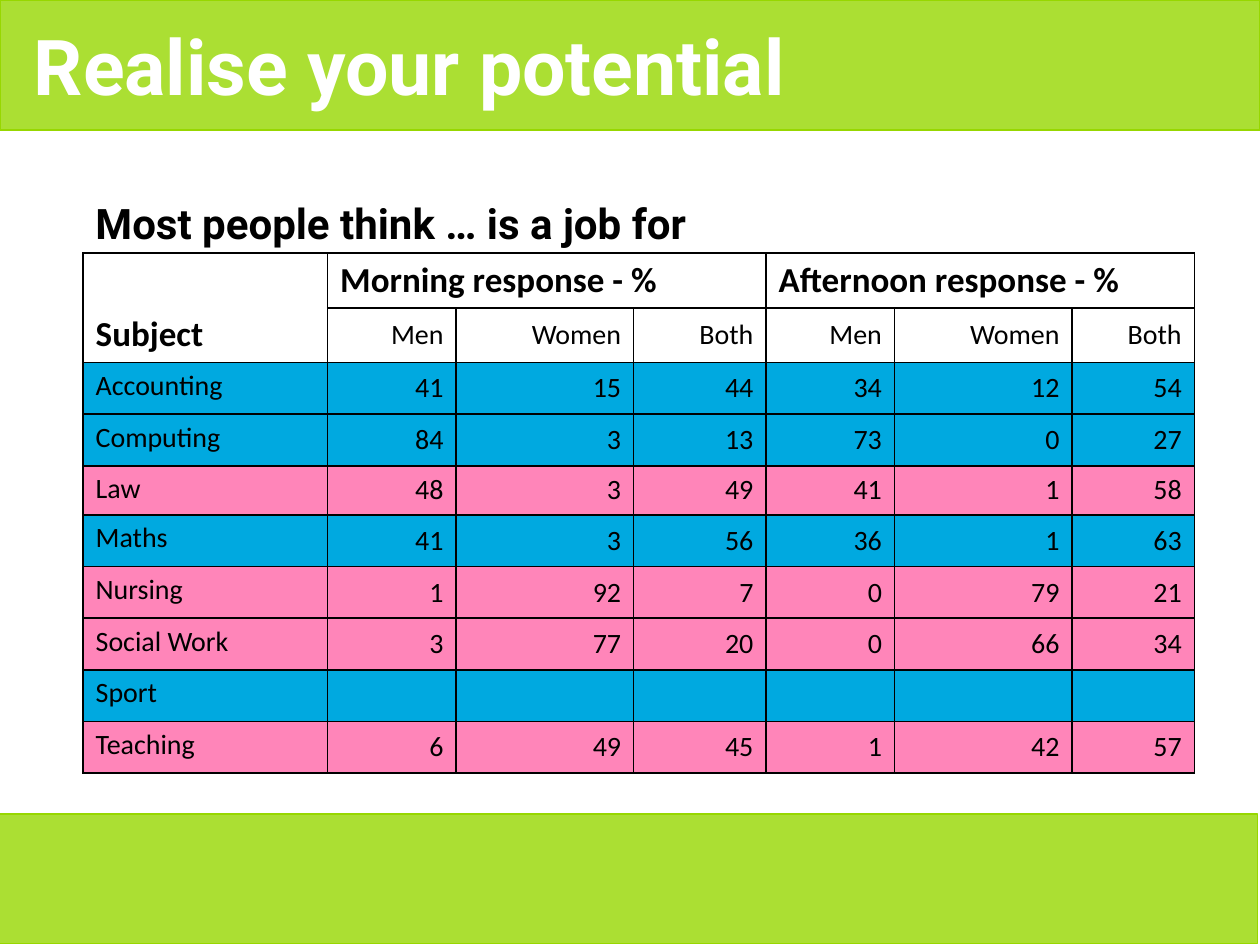
from dataclasses import dataclass

from lxml import etree
from pptx import Presentation
from pptx import util as u
from pptx.dml.color import RGBColor
from pptx.enum import shapes, text
from pptx.oxml.ns import qn

TITLE = "Realise your potential"
HEADING = "Most people think … is a job for"
GROUPS = ["Morning response - %", "Afternoon response - %"]
ANSWERS = ["Men", "Women", "Both"]
# subject, row colour, morning and afternoon percentages
SUBJECTS = [
    ("Accounting", "blue", [41, 15, 44, 34, 12, 54]),
    ("Computing", "blue", [84, 3, 13, 73, 0, 27]),
    ("Law", "pink", [48, 3, 49, 41, 1, 58]),
    ("Maths", "blue", [41, 3, 56, 36, 1, 63]),
    ("Nursing", "pink", [1, 92, 7, 0, 79, 21]),
    ("Social Work", "pink", [3, 77, 20, 0, 66, 34]),
    ("Sport", "blue", [""] * 6),
    ("Teaching", "pink", [6, 49, 45, 1, 42, 57]),
]
COL_WIDTHS = [1.94, 1.02, 1.41, 1.05, 1.02, 1.41, 0.97]
ROW_HEIGHT, LAW_HEIGHT = 0.41, 0.39
LEFT, WIDTH = 0.66, 8.84


@dataclass(frozen=True)
class Theme:
    green: str = "97D700"
    blue: str = "00A9E0"
    pink: str = "FF85B9"
    black: str = "000000"
    white: str = "FFFFFF"
    head_font: str = "Roboto"
    body_font: str = "Calibri"
    title: int = 44
    heading: int = 24
    group: int = 20
    body: int = 16


T = Theme()
ANCHOR, ALIGN = text.MSO_ANCHOR, text.PP_ALIGN


def write(tf, words, size, font, color=T.black, bold=False, align=ALIGN.LEFT):
    tf.text = str(words)
    p = tf.paragraphs[0]
    p.alignment = align
    for r in p.runs:
        f = r.font
        f.size, f.name, f.bold = u.Pt(size), font, bold
        f.color.rgb = RGBColor.from_string(color)
    return p


def add_bar(s, left, top):
    """Add a full-width green band at 80 % opacity."""
    sp = s.shapes.add_shape(shapes.MSO_SHAPE.RECTANGLE, u.Inches(left),
                            u.Inches(top), u.Inches(10), u.Inches(1.03))
    sp.shadow.inherit = False
    sp.fill.solid()
    sp.fill.fore_color.rgb = sp.line.color.rgb = RGBColor.from_string(T.green)
    sp.line.width = u.Pt(1)
    clr = sp._element.spPr.find(qn("a:solidFill")).find(qn("a:srgbClr"))
    etree.SubElement(clr, qn("a:alpha"), val="80000")
    return sp


def style_cell(cell, fill=None):
    """Draw the four borders, then the fill, which must follow them in the XML."""
    tcPr = cell._tc.get_or_add_tcPr()
    for side in ("lnL", "lnR", "lnT", "lnB"):
        ln = etree.SubElement(tcPr, qn(f"a:{side}"), w=str(u.Pt(1)))
        solid = etree.SubElement(ln, qn("a:solidFill"))
        etree.SubElement(solid, qn("a:srgbClr"), val=T.black)
    if fill:
        cell.fill.solid()
        cell.fill.fore_color.rgb = RGBColor.from_string(fill)
    else:
        cell.fill.background()


def write_cell(cell, words, anchor=ANCHOR.TOP, size=T.body, **style):
    cell.vertical_anchor = anchor
    write(cell.text_frame, words, size, T.body_font, **style)


def add_titles(s):
    tf = add_bar(s, 0, 0).text_frame
    tf.word_wrap = True
    tf.vertical_anchor = ANCHOR.MIDDLE
    tf.margin_left = tf.margin_right = u.Inches(0.07)
    tf.margin_top = tf.margin_bottom = u.Inches(0.04)
    p = write(tf, TITLE, T.title, T.head_font, T.white, bold=True)
    p._p.get_or_add_pPr().set("marL", str(u.Inches(0.2)))
    add_bar(s, -0.02, 6.46)

    tf = s.shapes.add_textbox(u.Inches(LEFT), u.Inches(1.39),
                              u.Inches(WIDTH), u.Inches(0.63)).text_frame
    tf.word_wrap = True
    tf.vertical_anchor = ANCHOR.BOTTOM
    p = write(tf, HEADING, T.heading, T.head_font, bold=True)
    p.line_spacing = 0.9


def add_survey_table(s):
    heights = [ROW_HEIGHT] * 2 + [
        LAW_HEIGHT if name == "Law" else ROW_HEIGHT for name, _, _ in SUBJECTS]
    tbl = s.shapes.add_table(len(heights), len(COL_WIDTHS), u.Inches(LEFT),
                             u.Inches(2.01), u.Inches(WIDTH),
                             u.Inches(sum(heights))).table
    tbl.first_row = tbl.horz_banding = False
    for col, width in zip(tbl.columns, COL_WIDTHS):
        col.width = u.Inches(width)
    for row, height in zip(tbl.rows, heights):
        row.height = u.Inches(height)

    fills = [None, None] + [getattr(T, color) for _, color, _ in SUBJECTS]
    for row, fill in zip(tbl.rows, fills):
        for cell in row.cells:
            style_cell(cell, fill)

    tbl.cell(0, 0).merge(tbl.cell(1, 0))
    write_cell(tbl.cell(0, 0), "Subject", ANCHOR.BOTTOM, T.group, bold=True)
    span = len(ANSWERS)
    for i, group in enumerate(GROUPS):
        first = 1 + i * span
        tbl.cell(0, first).merge(tbl.cell(0, first + span - 1))
        write_cell(tbl.cell(0, first), group, size=T.group, bold=True)

    value_rows = [ANSWERS * len(GROUPS)] + [values for _, _, values in SUBJECTS]
    for i, values in enumerate(value_rows, 1):
        for j, value in enumerate(values, 1):
            write_cell(tbl.cell(i, j), value, ANCHOR.MIDDLE, align=ALIGN.RIGHT)
    for i, (name, _, _) in enumerate(SUBJECTS, 2):
        write_cell(tbl.cell(i, 0), name)


def main():
    prs = Presentation()
    prs.slide_width, prs.slide_height = u.Inches(10), u.Inches(7.5)
    s = prs.slides.add_slide(prs.slide_layouts[6])
    add_titles(s)
    add_survey_table(s)
    prs.save("out.pptx")


if __name__ == "__main__":
    main()
